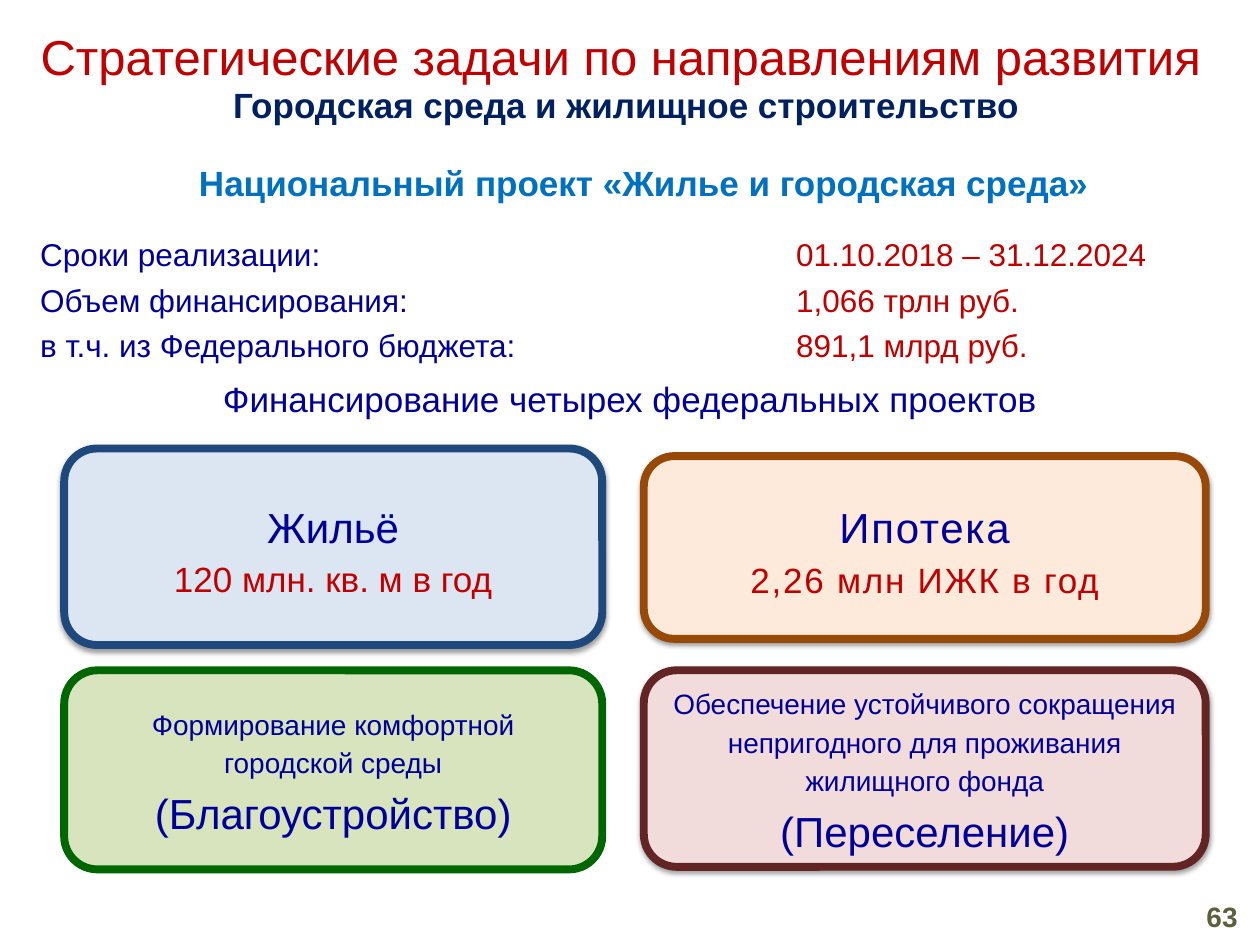
from lxml import etree
from pptx import Presentation
from pptx import util as u
from pptx.dml.color import RGBColor
from pptx.enum import shapes, text
from pptx.oxml import ns

COLS, ROWS = 100, 75
WIDTH, HEIGHT = u.Inches(10), u.Inches(7.5)
NAVY, RED = "000099", "C00000"
ALIGN, ANCHOR = text.PP_ALIGN, text.MSO_ANCHOR


def rgb(value):
    """Turn a hex string into a colour."""
    return RGBColor.from_string(value)


def place(col, row, cols, rows):
    """Turn grid columns and rows into left, top, width and height."""
    x, y = WIDTH / COLS, HEIGHT / ROWS
    return [round(n) for n in (col * x, row * y, cols * x, rows * y)]


def sub(parent, tag, **attrs):
    """Append a drawing element with the given attributes."""
    return etree.SubElement(parent, ns.qn(tag), **attrs)


def add_run(p, content, size=20, color=NAVY, bold=False, spacing=0):
    """Add formatted text to a paragraph."""
    r = p.add_run()
    r.text = content
    r.font.name, r.font.size, r.font.bold = "Arial", u.Pt(size), bold
    r.font.color.rgb = rgb(color)
    if spacing:
        r.font._element.set("spc", str(spacing * 100))


def fill_text(tf, paragraphs, align=ALIGN.CENTER, anchor=ANCHOR.MIDDLE, leading=1.0, tab=None):
    """Write paragraphs, each a list of (text, format) runs, into a frame."""
    tf.word_wrap, tf.vertical_anchor = True, anchor
    for i, runs in enumerate(paragraphs):
        p = tf.add_paragraph() if i else tf.paragraphs[0]
        p.alignment, p.line_spacing = align, leading
        if tab:
            tabs = sub(p._p.get_or_add_pPr(), "a:tabLst")
            sub(tabs, "a:tab", pos=str(u.Inches(tab)), algn="l")
        for content, style in runs:
            add_run(p, content, **style)


def add_text(s, box, paragraphs, **layout):
    """Add a text box on the grid."""
    fill_text(s.shapes.add_textbox(*place(*box)).text_frame, paragraphs, **layout)


def add_shadow(sp):
    """Give a shape a soft shadow below it."""
    effects = sp._element.spPr.find(ns.qn("a:effectLst"))
    shadow = sub(effects, "a:outerShdw", blurRad=str(u.Pt(3.1)), dist=str(u.Pt(1.6)),
                 dir="5400000", rotWithShape="0")
    sub(sub(shadow, "a:srgbClr", val="000000"), "a:alpha", val="38000")


def add_card(s, box, fill, line, paragraphs, shadow=True):
    """Add a rounded card with a thick outline."""
    sp = s.shapes.add_shape(shapes.MSO_SHAPE.ROUNDED_RECTANGLE, *place(*box))
    sp.fill.solid()
    sp.fill.fore_color.rgb = rgb(fill)
    sp.line.color.rgb, sp.line.width = rgb(line), u.Pt(4.5)
    sp.shadow.inherit = False
    if shadow:
        add_shadow(sp)
    fill_text(sp.text_frame, paragraphs, leading=1.15)


def add_headings(s):
    """Add the title, the subtitles and the page number."""
    headings = [
        ((1.1, 0.3, 96.3, 8.3), "Стратегические задачи по направлениям развития",
         dict(size=28, color=RED)),
        ((0.8, 5.5, 97.8, 5.6), "Городская среда и жилищное строительство",
         dict(color="002060", bold=True)),
        ((1.1, 12.3, 100, 4.4), "Национальный проект «Жилье и городская среда»",
         dict(color="0070C0", bold=True)),
    ]
    for box, content, style in headings:
        add_text(s, box, [[(content, style)]])
    add_text(s, (3.1, 28.8, 93.8, 5.6), [[("Финансирование четырех федеральных проектов", {})]],
             anchor=ANCHOR.TOP, leading=1.2)
    add_text(s, (75.9, 70.7, 23.3, 4), [[("63", dict(size=16, color="5C5E3C", bold=True))]],
             align=ALIGN.RIGHT)


def add_facts(s):
    """Add the labelled dates and amounts."""
    facts = [
        ("Сроки реализации:", "01.10.2018 – 31.12.2024"),
        ("Объем финансирования:", "1,066 трлн руб."),
        ("в т.ч. из Федерального бюджета:", "891,1 млрд руб."),
    ]
    rows = [[(label + "\t", dict(size=18)), (value, dict(size=18, color=RED))]
            for label, value in facts]
    add_text(s, (2.2, 17.6, 96.2, 11.3), rows, align=ALIGN.LEFT, anchor=ANCHOR.TOP,
             leading=1.2, tab=6)


def add_cards(s):
    """Add the four federal projects."""
    left, right = (5.1, 42.7), (51.1, 44.6)
    big, small = dict(size=24), dict(size=16)
    cards = [
        (left, 35.6, 15.6, "DCE6F2", "1F497D", True,
         [("Жильё", big), ("120 млн. кв. м в год", dict(color=RED))]),
        (right, 36.2, 14.5, "FDEADA", "984807", True,
         [("Ипотека", dict(size=24, spacing=1)),
          ("2,26 млн ИЖК в год", dict(color=RED, spacing=1))]),
        (left, 53.2, 15.8, "D7E4BD", "006600", False,
         [("Формирование комфортной", small), ("городской среды", small),
          ("(Благоустройство)", big)]),
        (right, 53.2, 15.6, "F2DCDB", "632523", True,
         [("Обеспечение устойчивого сокращения непригодного для проживания жилищного фонда",
           small), ("(Переселение)", big)]),
    ]
    for (col, cols), row, rows, fill, line, shadow, lines in cards:
        add_card(s, (col, row, cols, rows), fill, line, [[item] for item in lines], shadow)


def main():
    """Build and save the slide."""
    prs = Presentation()
    prs.slide_width, prs.slide_height = WIDTH, HEIGHT
    s = prs.slides.add_slide(prs.slide_layouts[6])
    add_headings(s)
    add_facts(s)
    add_cards(s)
    prs.save("out.pptx")


if __name__ == "__main__":
    main()
